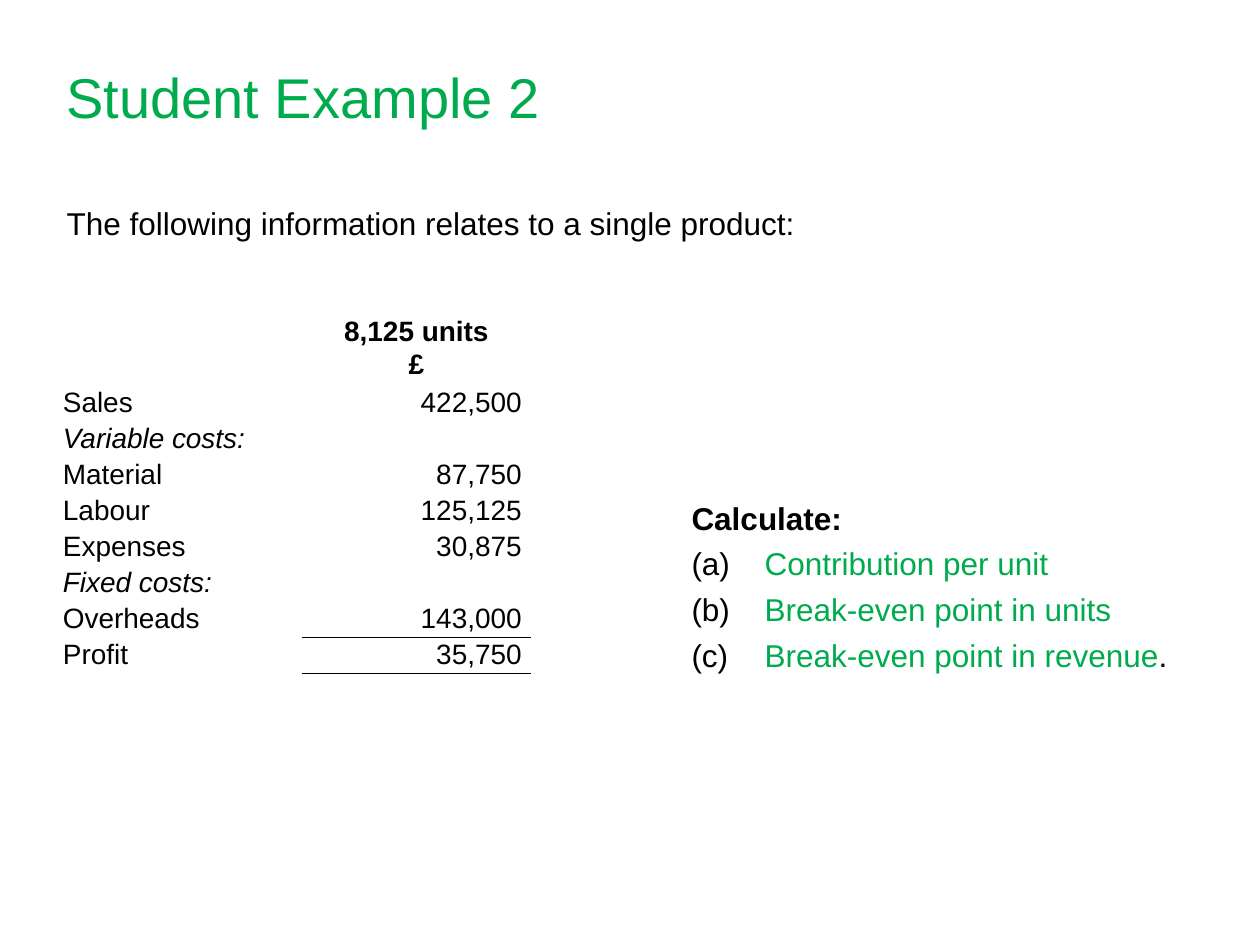
from lxml.etree import SubElement as Sub
from pptx import Presentation
from pptx.dml.color import RGBColor as RGB
from pptx.enum.text import MSO_ANCHOR as Anchor, PP_ALIGN as Align
from pptx.oxml.ns import qn
from pptx.util import Inches, Pt

FONT = "Arial"
COLORS = {"ink": "000000", "green": "00AB4E"}
COSTS = [
    ("Sales", "422,500"),
    ("Variable costs:", ""),
    ("Material", "87,750"),
    ("Labour", "125,125"),
    ("Expenses", "30,875"),
    ("Fixed costs:", ""),
    ("Overheads", "143,000"),
    ("Profit", "35,750"),
]
TASKS = [
    ("(a)", "Contribution per unit", ""),
    ("(b)", "Break-even point in units", ""),
    ("(c)", "Break-even point in revenue", "."),
]


def style(run, size, color="ink", bold=False, italic=False):
    font = run.font
    font.name, font.size = FONT, Pt(size)
    font.bold, font.italic = bold, italic
    font.color.rgb = RGB.from_string(COLORS[color])


def add_box(slide, left, top, width, height, anchor=Anchor.TOP):
    box = slide.shapes.add_textbox(*map(Inches, (left, top, width, height)))
    frame = box.text_frame
    frame.word_wrap = True
    frame.vertical_anchor = anchor
    return frame


def add_line(slide, area, text, size, color="ink", bold=False, anchor=Anchor.TOP):
    frame = add_box(slide, *area, anchor)
    frame.text = text
    style(frame.paragraphs[0].runs[0], size, color, bold)
    return frame


def add_task(frame, mark, text, end):
    para = frame.add_paragraph()
    para.space_before = Pt(4.5)
    props = para._p.get_or_add_pPr()
    props.set("marL", str(Inches(0.58)))
    props.set("indent", str(-Inches(0.58)))
    for part, color in ((mark + "\t", "ink"), (text, "green"), (end, "ink")):
        if part:
            run = para.add_run()
            run.text = part
            style(run, 18, color)


def add_rule(cell, side):
    line = Sub(cell._tc.get_or_add_tcPr(), qn(f"a:ln{side}"), w=str(Pt(1)))
    fill = Sub(line, qn("a:solidFill"))
    Sub(fill, qn("a:srgbClr"), val=COLORS["ink"])


def fill_cell(cell, text, align=Align.LEFT, bold=False, rules=""):
    for side in rules:
        add_rule(cell, side)
    cell.fill.background()
    cell.margin_left = cell.margin_right = Inches(0.07)
    cell.margin_top = cell.margin_bottom = 0
    cell.text_frame.text = text
    for para in cell.text_frame.paragraphs:
        para.alignment = align
        para.line_spacing = 1.07
        for run in para.runs:
            style(run, 16, bold=bold, italic=text.endswith(":"))
        if not text:
            Sub(para._p, qn("a:endParaRPr"), sz="1000")


def add_costs(slide):
    area = map(Inches, (0.43, 2.49, 3.78, 2.31))
    table = slide.shapes.add_table(len(COSTS) + 1, 2, *area).table
    table.first_row = table.horz_banding = False
    for col, width in zip(table.columns, (1.97, 1.81)):
        col.width = Inches(width)
    for row in table.rows:
        row.height = Inches(0.22)
    table.rows[0].height = Inches(0.55)
    fill_cell(table.cell(0, 0), "")
    fill_cell(table.cell(0, 1), "8,125 units\n£", Align.CENTER, True)
    rules = {"Overheads": "B", "Profit": "TB"}
    for i, (name, value) in enumerate(COSTS, 1):
        fill_cell(table.cell(i, 0), name)
        fill_cell(table.cell(i, 1), value, Align.RIGHT, rules=rules.get(name, ""))


def main():
    deck = Presentation()
    deck.slide_width, deck.slide_height = Inches(10), Inches(7.5)
    slide = deck.slides.add_slide(deck.slide_layouts[6])
    intro = add_line(slide, (0.43, 1.55, 8.81, 0.63),
                     "The following information relates to a single product:", 18)
    intro.paragraphs[0].line_spacing = 1.07
    add_line(slide, (0.43, 0.13, 9.24, 1.26), "Student Example 2", 32, "green",
             anchor=Anchor.MIDDLE)
    add_costs(slide)
    tasks = add_line(slide, (5.39, 3.91, 4.17, 1.73), "Calculate:", 18, bold=True)
    for task in TASKS:
        add_task(tasks, *task)
    deck.save("out.pptx")


if __name__ == "__main__":
    main()
